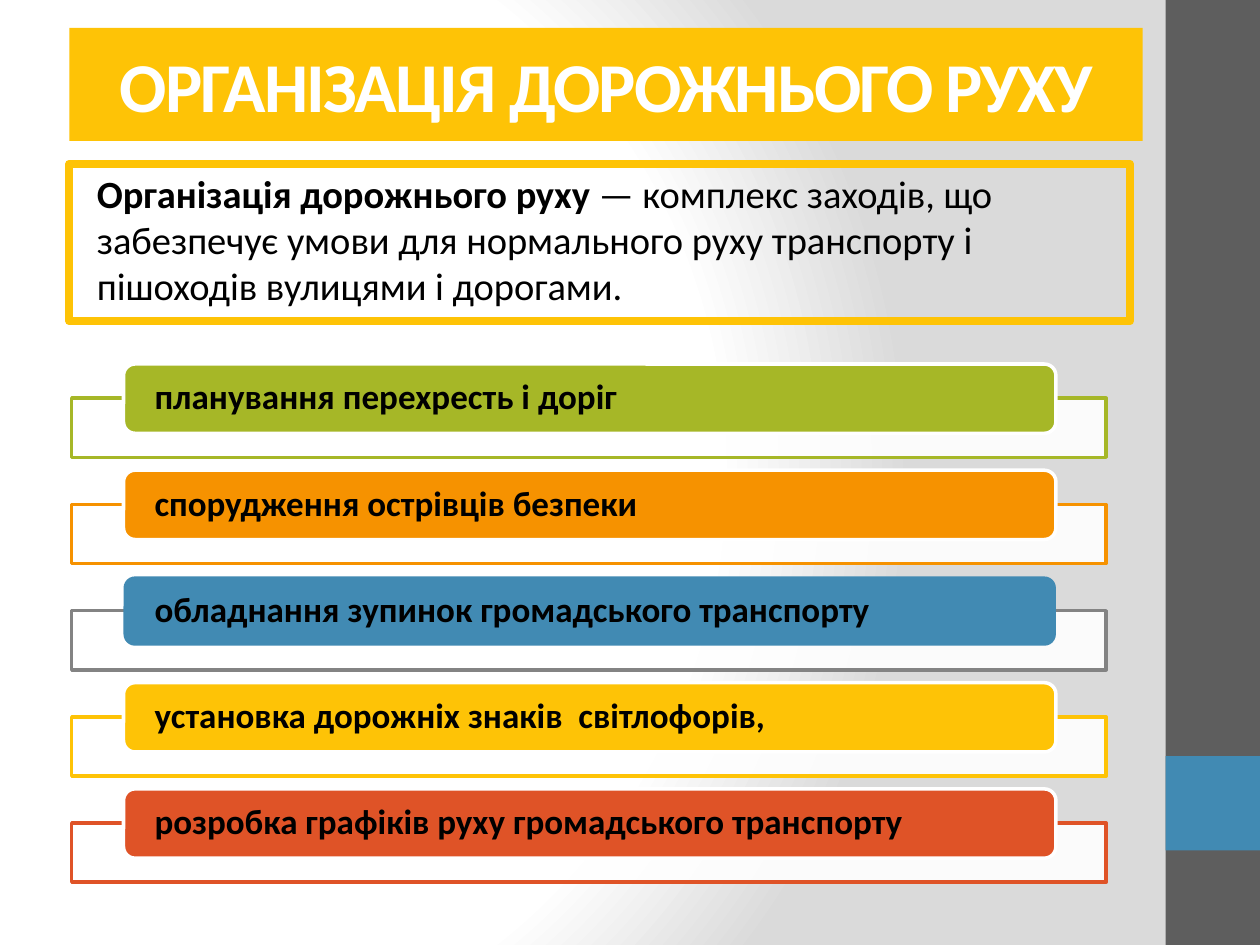
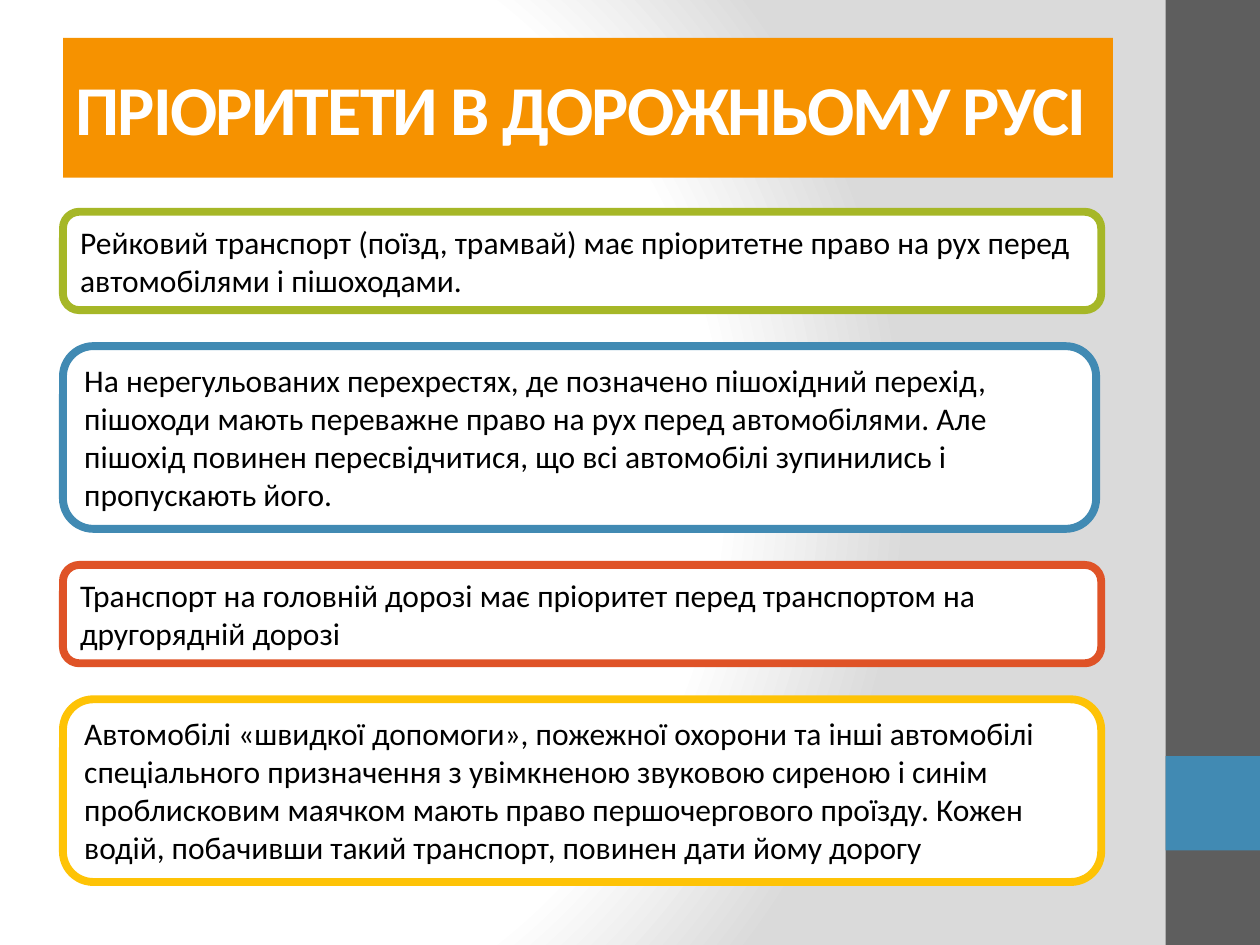
from dataclasses import dataclass

from lxml import etree
from pptx import Presentation
from pptx.dml.color import RGBColor
from pptx.enum.shapes import MSO_SHAPE
from pptx.enum.text import MSO_ANCHOR, PP_ALIGN
from pptx.oxml import parse_xml
from pptx.oxml.ns import nsdecls, qn
from pptx.util import Pt

RECTANGLE, ROUNDED = MSO_SHAPE.RECTANGLE, MSO_SHAPE.ROUNDED_RECTANGLE
TOP, MIDDLE = MSO_ANCHOR.TOP, MSO_ANCHOR.MIDDLE
LEFT, CENTER = PP_ALIGN.LEFT, PP_ALIGN.CENTER


@dataclass(frozen=True)
class Theme:
    font: str = "Calibri"
    white: str = "FFFFFF"
    black: str = "000000"
    shade: str = "DADADA"
    band: str = "5E5E5E"
    gray: str = "838383"
    green: str = "A6B727"
    orange: str = "F69200"
    blue: str = "418AB3"
    yellow: str = "FEC306"
    red: str = "DF5327"
    title_size: int = 40
    definition_size: int = 22
    measure_size: int = 20
    rule_size: int = 18
    thin: float = 2
    thick: float = 4.5


THEME = Theme()


def add_block(page, preset, place, fill=None, line=None, weight=THEME.thin):
    """Add a shape at (left, top, width, height) in points."""
    box = page.shapes.add_shape(preset, *[Pt(length) for length in place])
    box.shadow.inherit = False
    if fill:
        box.fill.solid()
        box.fill.fore_color.rgb = RGBColor.from_string(fill)
    else:
        box.fill.background()
    if line:
        box.line.color.rgb = RGBColor.from_string(line)
        box.line.width = Pt(weight)
    else:
        box.line.fill.background()
    return box


def write(box, texts, size, color=THEME.black, bold=False, anchor=TOP, align=LEFT):
    """Fill a shape with one paragraph, one run for each text."""
    frame = box.text_frame
    frame.word_wrap = True
    frame.vertical_anchor = anchor
    para = frame.paragraphs[0]
    para.alignment = align
    for text in texts:
        span = para.add_run()
        span.text = text
        span.font.name = THEME.font
        span.font.size = Pt(size)
        span.font.bold = bold
        span.font.color.rgb = RGBColor.from_string(color)
    return para


deck = Presentation()
deck.slide_width, deck.slide_height = Pt(720), Pt(540)

# Shared background: a round gradient on the master
master = deck.slide_master
master.background.fill.solid()
solid = master.element.find(".//" + qn("p:bgPr")).find(qn("a:solidFill"))
stops = "".join(
    f'<a:gs pos="{share * 1000}"><a:srgbClr val="{color}"/></a:gs>'
    for share, color in [(0, THEME.white), (75, THEME.white), (100, THEME.shade)]
)
solid.getparent().replace(solid, parse_xml(
    f'<a:gradFill rotWithShape="1" {nsdecls("a")}><a:gsLst>{stops}</a:gsLst>'
    '<a:path path="circle"><a:fillToRect l="20000" t="50000" r="100000" b="50000"/>'
    '</a:path></a:gradFill>'
))

# Pages with side band and title
titles = [
    ("ОРГАНІЗАЦІЯ ДОРОЖНЬОГО РУХУ", (39.6, 16, 613.4, 64.6), THEME.yellow, CENTER),
    ("ПРІОРИТЕТИ В ДОРОЖНЬОМУ РУСІ", (36, 21.6, 600, 80), THEME.orange, LEFT),
]
pages = []
for title, place, color, align in titles:
    page = deck.slides.add_slide(deck.slide_layouts[6])
    add_block(page, RECTANGLE, (666, 0, 54, 540), THEME.band)
    add_block(page, RECTANGLE, (666, 432, 54, 54), THEME.blue)
    heading = write(add_block(page, RECTANGLE, place, color), [title],
                    THEME.title_size, THEME.white, True, MIDDLE, align)
    heading.runs[0].font._element.set("spc", "-100")
    pages.append(page)
organisation, priorities = pages

# Slide 1: definition
definition = write(
    add_block(organisation, RECTANGLE, (39.6, 93.6, 606.2, 90), None,
              THEME.yellow, THEME.thick),
    ["Організація дорожнього руху ",
     "— комплекс заходів, що забезпечує умови для нормального руху "
     "транспорту і пішоходів вулицями і дорогами."],
    THEME.definition_size,
)
definition.runs[0].font.bold = True
definition.space_before = Pt(4.4)
definition._p.get_or_add_pPr().set("marL", str(Pt(8.64)))

# Slide 1: list of measures, each a label over a frame
measures = [
    ("планування перехресть і доріг", THEME.green, THEME.green, THEME.white),
    ("спорудження острівців безпеки", THEME.orange, THEME.orange, THEME.white),
    ("обладнання зупинок громадського транспорту", THEME.blue, THEME.gray, None),
    ("установка дорожніх знаків  світлофорів,", THEME.yellow, THEME.yellow, THEME.white),
    ("розробка графіків руху громадського транспорту", THEME.red, THEME.red, THEME.white),
]
MEASURE_TOP, MEASURE_STEP = 208, 60.7
for index, (text, color, frame_color, outline) in enumerate(measures):
    top = MEASURE_TOP + index * MEASURE_STEP
    frame = add_block(organisation, RECTANGLE, (41, top + 19.6, 591.1, 33.8),
                      THEME.white, frame_color)
    tint = frame.fill._xPr.find(qn("a:solidFill"))[0]
    etree.SubElement(tint, qn("a:alpha"), val="90000")

    label = add_block(organisation, ROUNDED, (70.6, top, 532.8, 39.6), color, outline)
    para = write(label, [text], THEME.measure_size, bold=True, anchor=MIDDLE)
    para.line_spacing = 0.9
    inner = label.text_frame
    inner.margin_left = inner.margin_right = Pt(15.8)
    inner.margin_top = inner.margin_bottom = Pt(0)

# Slide 2: priority rules, stacked with an equal gap
rules = [
    ("Рейковий транспорт (поїзд, трамвай) має пріоритетне право на рух перед "
     "автомобілями і пішоходами.", THEME.green, 593.3, 56.2),
    ("На нерегульованих перехрестях, де позначено пішохідний перехід, пішоходи "
     "мають переважне право на рух перед автомобілями. Але пішохід повинен "
     "пересвідчитися, що всі автомобілі зупинились і пропускають його.",
     THEME.blue, 590.4, 104.4),
    ("Транспорт на головній дорозі має пріоритет перед транспортом на "
     "другорядній дорозі", THEME.red, 593.3, 56.2),
    ("Автомобілі «швидкої допомоги», пожежної охорони та інші автомобілі "
     "спеціального призначення з увімкненою звуковою сиреною і синім "
     "проблисковим маячком мають право першочергового проїзду. Кожен водій, "
     "побачивши такий транспорт, повинен дати йому дорогу",
     THEME.yellow, 593.3, 104.4),
]
RULE_GAP = 20.6
top = 121
for text, color, width, height in rules:
    box = add_block(priorities, ROUNDED, (36, top, width, height),
                    THEME.white, color, THEME.thick)
    write(box, [text], THEME.rule_size)
    top += height + RULE_GAP

deck.save("out.pptx")
